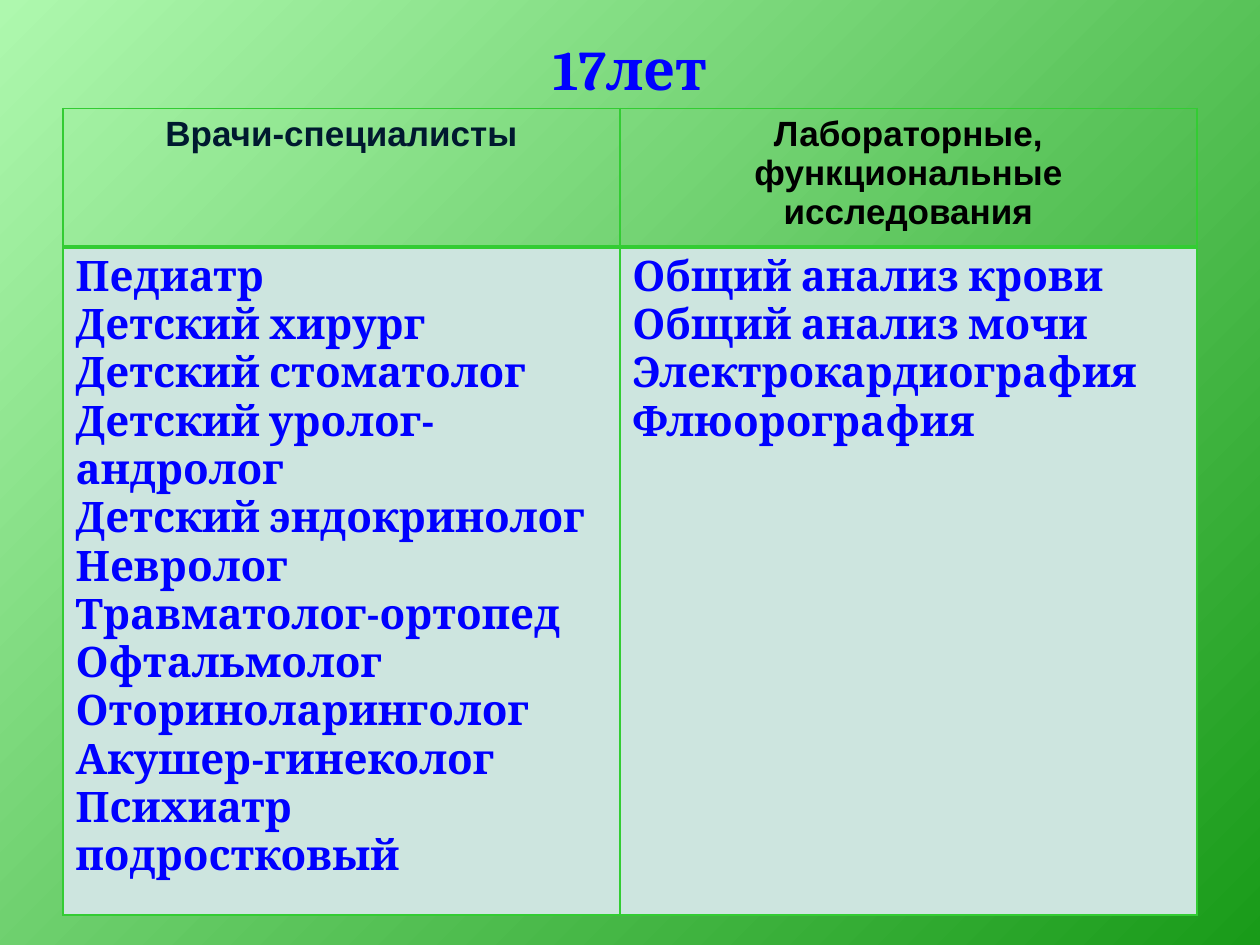
from dataclasses import dataclass

from lxml.etree import SubElement
from pptx import Presentation
from pptx.dml.color import RGBColor as Rgb
from pptx.enum.text import MSO_ANCHOR as Anchor, PP_ALIGN as Align
from pptx.oxml import parse_xml
from pptx.oxml.ns import nsdecls, qn
from pptx.util import Inches, Pt


@dataclass(frozen=True)
class Theme:
    light: str = "AEF8AE"
    dark: str = "199B19"
    blue: str = "0000FF"
    navy: str = "00192F"
    black: str = "000000"
    mint: str = "CDE5DF"
    rule: str = "33CC33"
    serif: str = "Cambria"
    sans: str = "Arial"
    title: int = 32
    head: int = 20
    body: int = 24


@dataclass(frozen=True)
class Column:
    head: str
    color: str
    width: float
    items: tuple[str, ...]


THEME = Theme()
COLUMNS = (
    Column("Врачи-специалисты", THEME.navy, 4.42, (
        "Педиатр", "Детский хирург", "Детский стоматолог",
        "Детский уролог- андролог", "Детский эндокринолог", "Невролог",
        "Травматолог-ортопед", "Офтальмолог", "Оториноларинголог",
        "Акушер-гинеколог", "Психиатр подростковый")),
    Column("Лабораторные, функциональные исследования", THEME.black, 4.58, (
        "Общий анализ крови", "Общий анализ мочи",
        "Электрокардиография", "Флюорография")),
)


def paint_back(slide) -> None:
    """Fill the background with a gradient spreading from the top left."""
    stops = "".join(
        f'<a:gs pos="{pos}"><a:srgbClr val="{color}"/></a:gs>'
        for pos, color in ((0, THEME.light), (100000, THEME.dark)))
    back = parse_xml(
        f'<p:bg {nsdecls("p", "a")}><p:bgPr><a:gradFill rotWithShape="1">'
        f'<a:gsLst>{stops}</a:gsLst><a:path path="circle">'
        '<a:fillToRect r="100000" b="100000"/></a:path></a:gradFill>'
        '<a:effectLst/></p:bgPr></p:bg>')
    slide.element.cSld.insert(0, back)


def write(frame, lines: tuple[str, ...], face: str, size: int,
          color: str, align: Align) -> None:
    frame.text = "\n".join(lines)
    for para in frame.paragraphs:
        para.alignment = align
        font = para.font
        font.name, font.size, font.bold = face, Pt(size), True
        font.color.rgb = Rgb.from_string(color)


def edge(cell, base: float) -> None:
    """Draw the four cell borders; base is the width of the bottom one."""
    props = cell._tc.get_or_add_tcPr()
    for spot, (side, width) in enumerate(
            (("L", 1), ("R", 1), ("T", 1), ("B", base))):
        line = SubElement(props, qn(f"a:ln{side}"), w=str(Pt(width)))
        fill = SubElement(line, qn("a:solidFill"))
        SubElement(fill, qn("a:srgbClr"), val=THEME.rule)
        props.insert(spot, line)


def add_title(slide, text: str) -> None:
    box = slide.shapes.add_textbox(
        Inches(0.5), Inches(0.3), Inches(9), Inches(0.48))
    frame = box.text_frame
    frame.word_wrap = True
    frame.vertical_anchor = Anchor.MIDDLE
    write(frame, (text,), THEME.serif, THEME.title, THEME.blue, Align.CENTER)


def add_grid(slide, columns: tuple[Column, ...]) -> None:
    shape = slide.shapes.add_table(
        2, len(columns), Inches(0.5), Inches(0.86), Inches(9), Inches(5.27))
    table = shape.table
    table.horz_banding = False
    for row in table.rows:
        row.height = Inches(0.41)
    shape.height = Inches(5.27)
    for num, col in enumerate(columns):
        table.columns[num].width = Inches(col.width)
        head, body = table.cell(0, num), table.cell(1, num)
        head.fill.background()
        body.fill.solid()
        body.fill.fore_color.rgb = Rgb.from_string(THEME.mint)
        write(head.text_frame, (col.head,), THEME.sans, THEME.head,
              col.color, Align.CENTER)
        write(body.text_frame, col.items, THEME.serif, THEME.body,
              THEME.blue, Align.LEFT)
        edge(head, 3)
        edge(body, 1)


def main() -> None:
    deck = Presentation()
    deck.slide_width, deck.slide_height = Inches(10), Inches(7.5)
    slide = deck.slides.add_slide(deck.slide_layouts[6])
    paint_back(slide)
    add_title(slide, "17лет")
    add_grid(slide, COLUMNS)
    deck.save("out.pptx")


if __name__ == "__main__":
    main()
